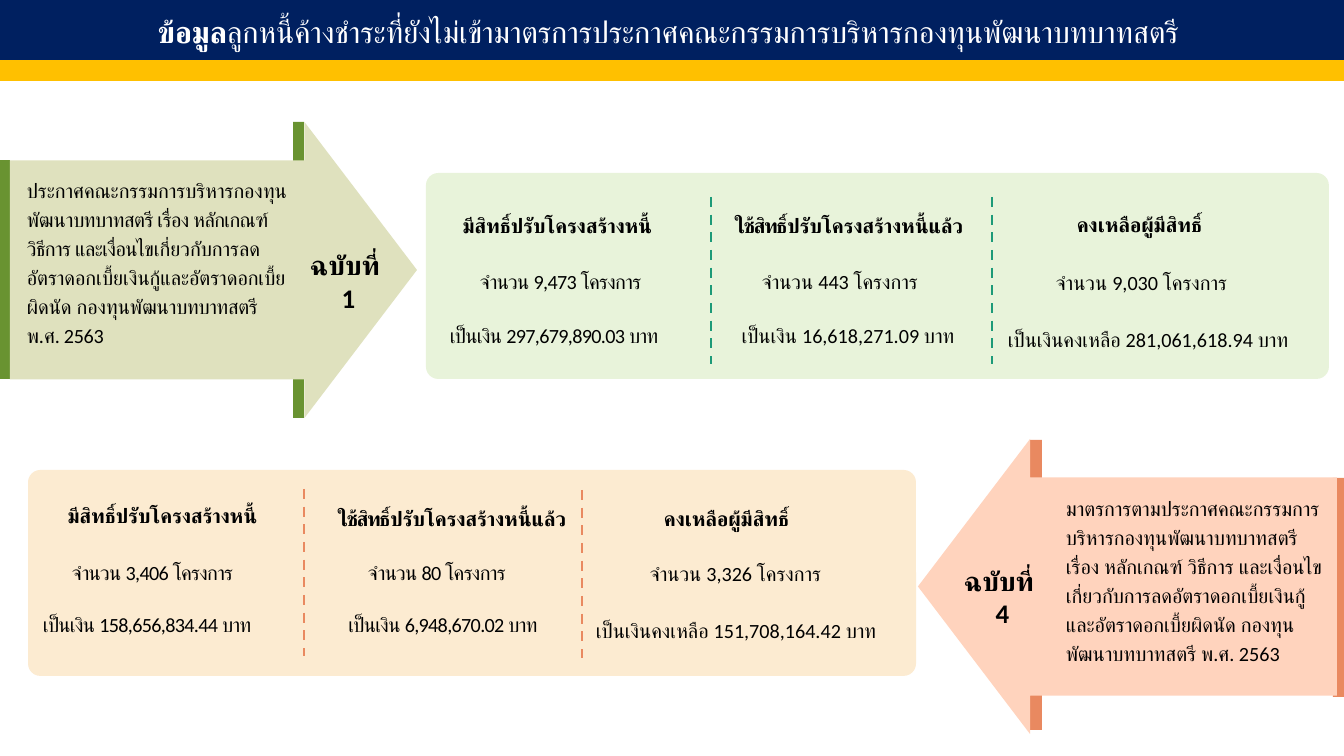
"""Build a slide on overdue debtors of the women's fund, in two arrow panels."""
from dataclasses import dataclass
from typing import NamedTuple

from lxml import etree
from pptx import Presentation
from pptx.dml.color import RGBColor
from pptx.enum.dml import MSO_LINE
from pptx.enum.shapes import MSO_CONNECTOR, MSO_SHAPE
from pptx.enum.text import MSO_ANCHOR, MSO_AUTO_SIZE, PP_ALIGN
from pptx.oxml.ns import qn
from pptx.util import Emu, Pt

RECT, ROUND = MSO_SHAPE.RECTANGLE, MSO_SHAPE.ROUNDED_RECTANGLE
RIGHT, LEFT = MSO_SHAPE.RIGHT_ARROW, MSO_SHAPE.LEFT_ARROW
LINE, DASH = MSO_CONNECTOR.STRAIGHT, MSO_LINE.DASH
START, MID = PP_ALIGN.LEFT, PP_ALIGN.CENTER
TOP, CENTER = MSO_ANCHOR.TOP, MSO_ANCHOR.MIDDLE
FIXED = MSO_AUTO_SIZE.NONE
FONT = "Calibri"
SCALE = 914400 / 121
WIDE, HIGH = 1344, 756
COLOR = {
    "navy": "002060", "gold": "FFC000", "white": "FFFFFF", "black": "000000",
    "mint": "E8F3DA", "teal": "1D9A78", "green": "699331", "sage": "DFE1BE",
    "cream": "FCEBD1", "coral": "E98960", "peach": "FFD3BD",
}


class Box(NamedTuple):
    x: int
    y: int
    w: int
    h: int


class Run(NamedTuple):
    text: str
    bold: bool = False
    track: float = 0


class Cell(NamedTuple):
    x: int
    y: int
    w: int
    runs: list[Run]
    align: PP_ALIGN = START
    gap: float = 1


class Rule(NamedTuple):
    x: int
    top: int
    end: int


@dataclass
class Panel:
    card: Box
    tint: str
    rules: list[Rule]
    dash: str
    bars: list[Box]
    edge: str
    arrow: Box
    kind: MSO_SHAPE
    fill: str
    note: Box
    words: list[Run]
    label: Box
    number: str
    cells: list[Cell]


HEAD = [Run("มีสิทธิ์ปรับโครงสร้างหนี้", True)]
USED = [Run("ใช้สิทธิ์", True, -0.8), Run("ปรับโครงสร้างหนี้แล้ว ", True)]
REST = [Run("คงเหลือผู้มีสิทธิ์", True)]

PANELS = [
    Panel(
        Box(426, 173, 903, 206), "mint",
        [Rule(711, 197, 364), Rule(992, 197, 364)], "teal",
        [Box(293, 122, 11, 296), Box(0, 160, 10, 219)], "green",
        Box(10, 122, 407, 296), RIGHT, "sage",
        Box(15, 168, 284, 217),
        [Run("ประกาศคณะกรรมการบริหารกองทุนพัฒนา"),
         Run("บทบาทสตรี เรื่อง หลักเกณฑ์ วิธีการ และเงื่อนไข", track=-0.3),
         Run("เกี่ยวกับการลดอัตราดอกเบี้ยเงินกู้และอัตราดอกเบี้ยผิดนัด กองทุนพัฒนา"),
         Run("บทบาทสตรี \nพ.ศ. 2563", track=-0.2)],
        Box(280, 243, 137, 73), "1",
        [Cell(451, 207, 244, HEAD),
         Cell(468, 263, 217, [Run("จำนวน 9,473 โครงการ", track=-0.4)]),
         Cell(438, 317, 270, [Run("เป็นเงิน 297,679,890.03 บาท", track=-0.4)]),
         Cell(725, 207, 254, USED, MID),
         Cell(750, 263, 204, [Run("จำนวน 443 โครงการ")]),
         Cell(689, 317, 318, [Run("เป็นเงิน 16,618,271.09 บาท")], MID),
         Cell(1065, 206, 166, REST),
         Cell(1044, 264, 234, [Run("จำนวน 9,030 โครงการ")]),
         Cell(996, 309, 348, [Run("เป็นเงินคงเหลือ 281,061,618.94 บาท")], gap=1.5)],
    ),
    Panel(
        Box(28, 470, 888, 206), "cream",
        [Rule(582, 490, 658), Rule(304, 489, 656)], "coral",
        [Box(1030, 440, 12, 290), Box(1333, 478, 11, 219)], "coral",
        Box(918, 439, 419, 295), LEFT, "peach",
        Box(1054, 486, 287, 218),
        [Run("มาตรการตามประกาศคณะกรรมการบริหารกองทุนพัฒนาบทบาทสตรี เรื่อง "
             "หลักเกณฑ์ วิธีการ และเงื่อนไขเกี่ยวกับการลดอัตราดอกเบี้ยเงินกู้"
             "และอัตราดอกเบี้ยผิดนัด กองทุนพัฒนาบทบาทสตรี พ.ศ. 2563")],
        Box(934, 559, 137, 73), "4",
        [Cell(56, 497, 240, HEAD),
         Cell(60, 554, 212, [Run("จำนวน 3,406 โครงการ", track=-0.4)]),
         Cell(31, 606, 270, [Run("เป็นเงิน 158,656,834.44 บาท", track=-0.4)]),
         Cell(328, 500, 254, USED, MID),
         Cell(356, 554, 185, [Run("จำนวน 80 โครงการ", track=-0.4)]),
         Cell(312, 606, 262, [Run("เป็นเงิน 6,948,670.02 บาท", track=-0.4)], MID),
         Cell(652, 500, 166, REST),
         Cell(638, 555, 221, [Run("จำนวน 3,326 โครงการ")]),
         Cell(584, 600, 341, [Run("เป็นเงินคงเหลือ 151,708,164.42 บาท")], gap=1.5)],
    ),
]


def px(size: int) -> Emu:
    return Emu(round(size * SCALE))


def rgb(name: str) -> RGBColor:
    return RGBColor.from_string(COLOR[name])


def write(shape, runs: list[Run], *, size: int = 12, color: str = "black",
          align: PP_ALIGN = START, gap: float = 1, wrap: bool = True,
          anchor: MSO_ANCHOR = TOP) -> None:
    frame = shape.text_frame
    frame.auto_size = FIXED
    frame.word_wrap = wrap
    frame.vertical_anchor = anchor
    para = frame.paragraphs[0]
    para.alignment = align
    para.line_spacing = gap
    for part in runs:
        for row, text in enumerate(part.text.split("\n")):
            if row:
                para.add_line_break()
            run = para.add_run()
            run.text = text
            run.font.name = FONT
            run.font.size = Pt(size)
            run.font.bold = part.bold
            run.font.color.rgb = rgb(color)
            if part.track:
                run._r.get_or_add_rPr().set("spc", str(round(part.track * 100)))


def paint(shape, fill: str, edge: str = "") -> None:
    shape.fill.solid()
    shape.fill.fore_color.rgb = rgb(fill)
    if edge:
        shape.line.color.rgb = rgb(edge)
        shape.line.width = Pt(1)
    else:
        shape.line.fill.background()


def block(slide, kind: MSO_SHAPE, box: Box, fill: str, edge: str = "",
          adjust: tuple[float, ...] = ()) -> None:
    shape = slide.shapes.add_shape(kind, *map(px, box))
    shape.shadow.inherit = False
    paint(shape, fill, edge)
    for spot, value in enumerate(adjust):
        shape.adjustments[spot] = value


def split(slide, rule: Rule, color: str) -> None:
    line = slide.shapes.add_connector(
        LINE, px(rule.x), px(rule.top), px(rule.x), px(rule.end))
    line.line.color.rgb = rgb(color)
    line.line.width = Pt(1.5)
    line.line.dash_style = DASH
    etree.SubElement(line._element.spPr, qn("a:effectLst"))


def draw(slide, panel: Panel) -> None:
    block(slide, ROUND, panel.card, panel.tint, adjust=(0.06,))
    for rule in panel.rules:
        split(slide, rule, panel.dash)
    for bar in panel.bars:
        block(slide, RECT, bar, panel.edge)
    block(slide, panel.kind, panel.arrow, panel.fill, adjust=(0.74, 0.38))
    note = slide.shapes.add_textbox(*map(px, panel.note))
    write(note, panel.words, gap=1.2)
    label = slide.shapes.add_textbox(*map(px, panel.label))
    write(label, [Run(f"ฉบับที่ \n{panel.number}", True)], size=16, align=MID)
    for cell in panel.cells:
        high = 47 if cell.gap > 1 else 36
        box = slide.shapes.add_textbox(*map(px, (cell.x, cell.y, cell.w, high)))
        write(box, cell.runs, align=cell.align, gap=cell.gap, wrap=cell.align == START)


def main() -> None:
    deck = Presentation()
    deck.slide_width, deck.slide_height = px(WIDE), px(HIGH)
    slide = deck.slides.add_slide(deck.slide_layouts[5])
    title = slide.shapes.title
    title.left, title.top, title.width, title.height = map(px, (0, 0, WIDE, 62))
    paint(title, "navy", "navy")
    write(title, [Run("ข้อมูล", True),
                  Run("ลูกหนี้ค้างชำระที่ยังไม่เข้ามาตรการประกาศคณะกรรมการบริหารกองทุนพัฒนาบทบาทสตรี ")],
          size=18, color="white", align=MID, anchor=CENTER)
    block(slide, RECT, Box(0, 61, WIDE, 19), "gold", "gold")
    for panel in PANELS:
        draw(slide, panel)
    deck.save("out.pptx")


if __name__ == "__main__":
    main()
